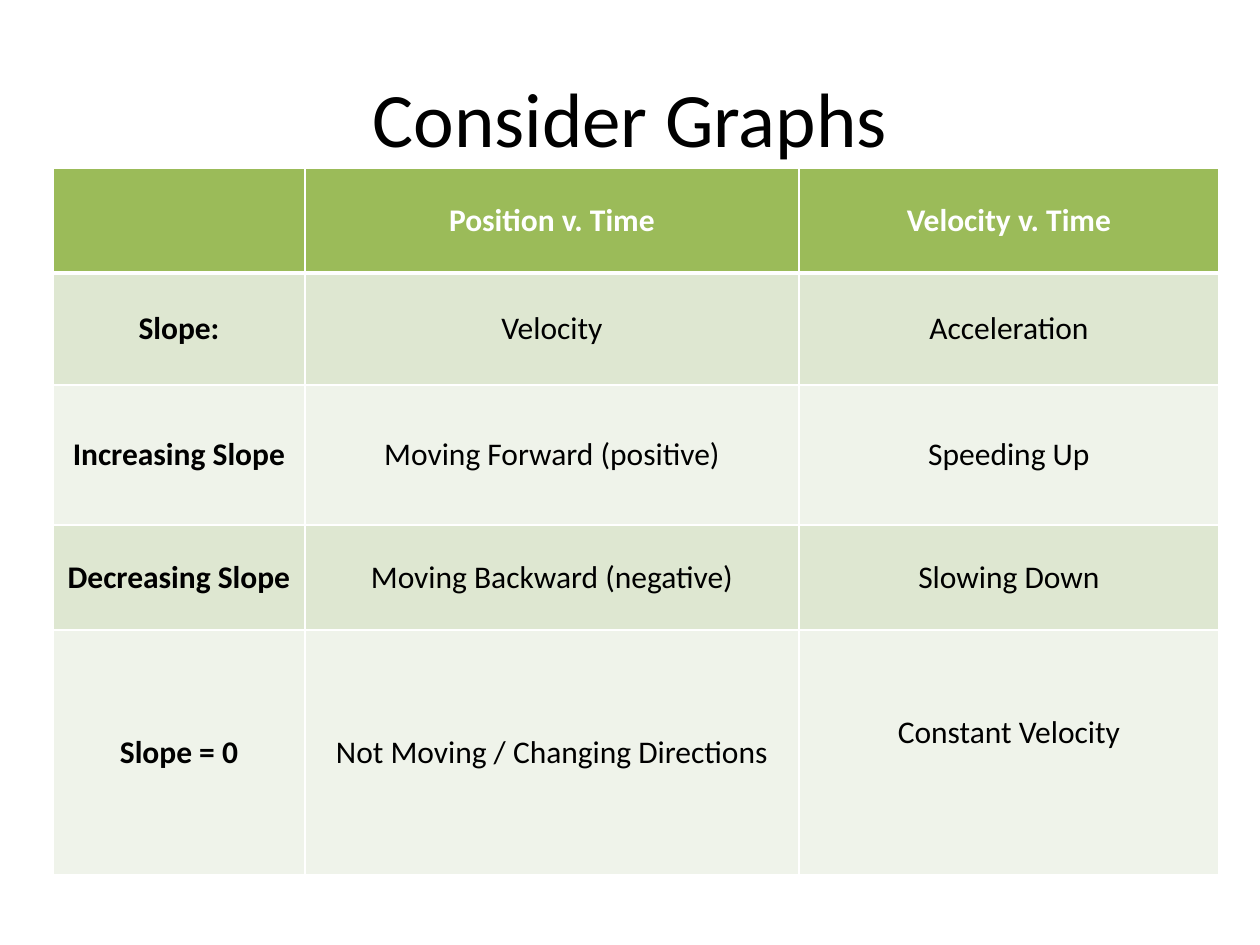
from lxml.etree import SubElement
from pptx import Presentation
from pptx.dml.color import RGBColor
from pptx.enum.text import MSO_ANCHOR as Anchor, PP_ALIGN as Align
from pptx.oxml.ns import qn
from pptx.util import Emu, Pt

PX = 914400 / 126
FONT = "Calibri"
BLACK = RGBColor(0x00, 0x00, 0x00)
WHITE = RGBColor(0xFF, 0xFF, 0xFF)
HEADER_GREEN = RGBColor(0x9B, 0xBB, 0x59)
BAND_DARK = RGBColor(0xDE, 0xE7, 0xD1)
BAND_LIGHT = RGBColor(0xEF, 0xF3, 0xEA)

COLUMN_WIDTHS = [252, 494, 420]
ROW_HEIGHTS = [105, 112, 140, 105, 245]
GRAPH_MEANINGS = [
    ["", "Position v. Time", "Velocity v. Time"],
    ["Slope:", "Velocity", "Acceleration"],
    ["Increasing Slope", "Moving Forward (positive)", "Speeding Up"],
    ["Decreasing Slope", "Moving Backward (negative)", "Slowing Down"],
    ["Slope = 0", "Not Moving / Changing Directions", "Constant Velocity"],
]


def px(length):
    """Turn px into EMU."""
    return Emu(round(length * PX))


def write(frame, text, size, color, bold=False):
    """Put one centred paragraph into a text frame."""
    paragraph = frame.paragraphs[0]
    paragraph.text = text
    paragraph.alignment = Align.CENTER
    font = paragraph.font
    font.name, font.size, font.bold = FONT, Pt(size), bold
    font.color.rgb = color


def add_borders(cell, top, bottom):
    """Draw white cell borders, with top and bottom widths in points."""
    properties = cell._tc.get_or_add_tcPr()
    for side, width in (("L", 1), ("R", 1), ("T", top), ("B", bottom)):
        line = SubElement(properties, qn(f"a:ln{side}"), w=str(Pt(width)))
        fill = SubElement(line, qn("a:solidFill"))
        SubElement(fill, qn("a:srgbClr"), val=str(WHITE))


def add_title(slide, left, top, width, height):
    """Place the slide title in its box."""
    title = slide.shapes.add_textbox(px(left), px(top), px(width), px(height))
    frame = title.text_frame
    frame.word_wrap = True
    frame.vertical_anchor = Anchor.MIDDLE
    write(frame, "Consider Graphs", 44, BLACK)


def add_graph_table(slide, left, top):
    """Place the table of slope meanings with its corner at left, top."""
    table = slide.shapes.add_table(
        len(ROW_HEIGHTS), len(COLUMN_WIDTHS), px(left), px(top),
        px(sum(COLUMN_WIDTHS)), px(sum(ROW_HEIGHTS))).table
    for column, width in zip(table.columns, COLUMN_WIDTHS):
        column.width = px(width)
    for r, (meanings, height) in enumerate(zip(GRAPH_MEANINGS, ROW_HEIGHTS)):
        table.rows[r].height = px(height)
        band = HEADER_GREEN if r == 0 else BAND_DARK if r % 2 else BAND_LIGHT
        for c, meaning in enumerate(meanings):
            cell = table.cell(r, c)
            cell.vertical_anchor = Anchor.MIDDLE
            add_borders(cell, 3 if r == 1 else 1, 3 if r == 0 else 1)
            cell.fill.solid()
            cell.fill.fore_color.rgb = band
            write(cell.text_frame, meaning, 18,
                  BLACK if r else WHITE, r == 0 or c == 0)
    constant_velocity = table.cell(4, 2)
    constant_velocity.margin_bottom = px(45)


def main():
    """Build and save the slide."""
    deck = Presentation()
    deck.slide_width, deck.slide_height = px(1260), px(945)
    slide = deck.slides.add_slide(deck.slide_layouts[6])
    add_title(slide, 63, 38, 1134, 157)
    add_graph_table(slide, 53, 168)
    deck.save("out.pptx")


if __name__ == "__main__":
    main()
